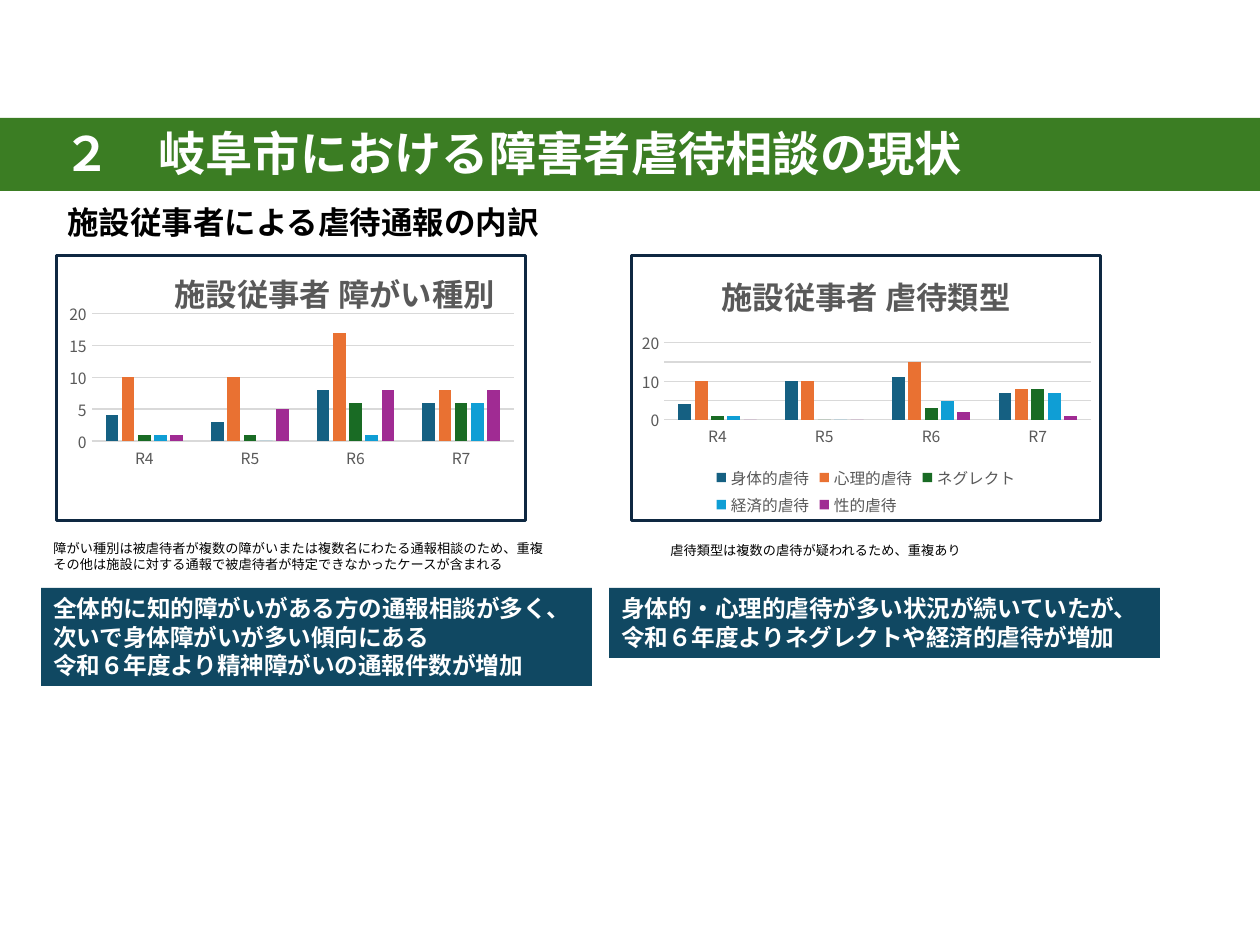
from dataclasses import dataclass

from lxml import etree
from pptx import Presentation
from pptx.chart.data import CategoryChartData as ChartData
from pptx.dml.color import RGBColor
from pptx.enum.chart import XL_CHART_TYPE as ChartType
from pptx.enum.chart import XL_LEGEND_POSITION as LegendPosition
from pptx.enum.chart import XL_TICK_MARK as TickMark
from pptx.enum.shapes import MSO_SHAPE as Shape
from pptx.enum.text import MSO_ANCHOR as Anchor
from pptx.enum.text import MSO_AUTO_SIZE as AutoSize
from pptx.oxml import parse_xml
from pptx.oxml.ns import nsdecls, qn
from pptx.util import Emu, Pt


@dataclass(frozen=True)
class Theme:
    font: str = "Noto Sans CJK JP"
    black: str = "000000"
    white: str = "FFFFFF"
    banner: str = "3B7D23"
    callout: str = "104862"
    chart_text: str = "595959"
    grid: str = "D9D9D9"
    border: str = "0E2841"
    series: tuple = ("156082", "E97132", "196B24", "0F9ED5", "A02B93")
    banner_size: float = 27
    heading_size: float = 18
    callout_size: float = 13.5
    chart_size: float = 10
    axis_size: float = 9
    note_size: float = 7.5


THEME = Theme()
PX_PER_INCH = 126
YEARS = ("R4", "R5", "R6", "R7")
DISABILITY_COUNTS = ((4, 3, 8, 6), (10, 10, 17, 8), (1, 1, 6, 6), (1, 0, 1, 6), (1, 5, 8, 8))
ABUSE_COUNTS = ((4, 10, 11, 7), (10, 10, 15, 8), (1, 0, 3, 8), (1, 0, 5, 7), (0, 0, 2, 1))
ABUSE_TYPES = ("身体的虐待", "心理的虐待", "ネグレクト", "経済的虐待", "性的虐待")


def px(length):
    return Emu(round(length * 914400 / PX_PER_INCH))


def rgb(color):
    return RGBColor.from_string(color)


def style_font(font, size, color, bold=False):
    font.size, font.bold = Pt(size), bold
    font.color.rgb = rgb(color)
    font.name = THEME.font
    # East Asian text takes its typeface from a separate element
    latin = font._element.find(qn("a:latin"))
    latin.addnext(etree.Element(qn("a:ea"), typeface=THEME.font))


def fill_text(shape, lines, size, color, bold=False):
    frame = shape.text_frame
    frame.word_wrap = False
    frame.auto_size = AutoSize.SHAPE_TO_FIT_TEXT
    frame.text = "\n".join(lines)
    for paragraph in frame.paragraphs:
        style_font(paragraph.font, size, color, bold)
    return frame


def add_text(slide, box, lines, size, color, bold=False):
    shape = slide.shapes.add_textbox(*map(px, box))
    return fill_text(shape, lines, size, color, bold)


def add_band(slide, box, color):
    shape = slide.shapes.add_shape(Shape.RECTANGLE, *map(px, box))
    shape.shadow.inherit = False
    shape.fill.solid()
    shape.fill.fore_color.rgb = rgb(color)
    shape.line.fill.background()


def add_callout(slide, box, lines):
    shape = slide.shapes.add_textbox(*map(px, box))
    shape.fill.solid()
    shape.fill.fore_color.rgb = rgb(THEME.callout)
    fill_text(shape, lines, THEME.callout_size, THEME.white, bold=True)


def layout_xml(position, inner=False):
    """Manual layout in fractions of the chart: x, y and optionally w, h."""
    target = '<c:layoutTarget val="inner"/>' if inner else ""
    modes = '<c:xMode val="edge"/><c:yMode val="edge"/>'
    places = "".join(f'<c:{key} val="{value}"/>' for key, value in zip("xywh", position))
    return parse_xml(
        f'<c:layout {nsdecls("c")}><c:manualLayout>{target}{modes}{places}'
        "</c:manualLayout></c:layout>"
    )


def remove_layout(element):
    for layout in element.findall(qn("c:layout")):
        element.remove(layout)


def set_title(chart, text, position):
    title = chart.chart_title
    title.text_frame.text = text
    style_font(title.text_frame.paragraphs[0].font, THEME.heading_size, THEME.chart_text, True)
    title.include_in_layout = False
    remove_layout(title._element)
    title._element.find(qn("c:tx")).addnext(layout_xml(position))


def set_plot_area(chart, position):
    area = chart._chartSpace.chart.plotArea
    remove_layout(area)
    area.insert(0, layout_xml(position, inner=True))


def set_border(chart):
    border = parse_xml(
        f'<c:spPr {nsdecls("c", "a")}><a:noFill/><a:ln w="{Pt(1.5)}"><a:solidFill>'
        f'<a:srgbClr val="{THEME.border}"/></a:solidFill></a:ln></c:spPr>'
    )
    chart._chartSpace.chart.addnext(border)


def style_axes(chart):
    for axis in (chart.category_axis, chart.value_axis):
        axis.major_tick_mark = axis.minor_tick_mark = TickMark.NONE
        style_font(axis.tick_labels.font, THEME.axis_size, THEME.chart_text)
    values = chart.value_axis
    values.minimum_scale, values.maximum_scale, values.major_unit = 0, 20, 5
    values.format.line.fill.background()
    values.has_major_gridlines = True
    for line in (chart.category_axis.format.line, values.major_gridlines.format.line):
        line.color.rgb = rgb(THEME.grid)
        line.width = Pt(0.75)


def add_legend(chart):
    chart.has_legend = True
    chart.legend.position = LegendPosition.BOTTOM
    chart.legend.include_in_layout = False
    style_font(chart.legend.font, THEME.axis_size, THEME.chart_text)


def add_column_chart(slide, box, title, title_at, plot_at, counts, names=()):
    """Clustered columns; the legend shows only when the series have names."""
    data = ChartData()
    data.categories = YEARS
    for name, values in zip(names or [""] * len(counts), counts):
        data.add_series(name, values)
    chart = slide.shapes.add_chart(ChartType.COLUMN_CLUSTERED, *map(px, box), data).chart
    style_font(chart.font, THEME.chart_size, THEME.black)
    set_title(chart, title, title_at)
    set_plot_area(chart, plot_at)
    set_border(chart)
    style_axes(chart)
    plot = chart.plots[0]
    plot.vary_by_categories = False
    plot.gap_width, plot.overlap = 219, -27
    for series, color in zip(plot.series, THEME.series):
        series.format.fill.solid()
        series.format.fill.fore_color.rgb = rgb(color)
    chart.has_legend = False
    if names:
        add_legend(chart)


def main():
    presentation = Presentation()
    presentation.slide_width, presentation.slide_height = px(1260), px(945)
    slide = presentation.slides.add_slide(presentation.slide_layouts[6])

    # Banner and heading
    add_band(slide, (0, 118, 1260, 73), THEME.banner)
    banner = add_text(slide, (55, 124, 1000, 64), ["２　岐阜市における障害者虐待相談の現状"],
                      THEME.banner_size, THEME.white, bold=True)
    banner.word_wrap, banner.auto_size = True, AutoSize.NONE
    banner.vertical_anchor = Anchor.MIDDLE
    banner.margin_left = banner.margin_right = px(9)
    banner.margin_top = banner.margin_bottom = px(5)
    banner.paragraphs[0].line_spacing = 0.9
    add_text(slide, (55, 197, 505, 50), ["施設従事者による虐待通報の内訳"],
             THEME.heading_size, THEME.black, bold=True)

    # Charts
    add_column_chart(slide, (55, 254, 472, 268), "施設従事者 障がい種別", (0.24, 0.02),
                     (0.075, 0.22, 0.9, 0.48), DISABILITY_COUNTS)
    add_column_chart(slide, (630, 254, 472, 268), "施設従事者 虐待類型", (0.18, 0.03),
                     (0.07, 0.33, 0.91, 0.29), ABUSE_COUNTS, ABUSE_TYPES)

    # Notes under the charts
    add_text(slide, (41, 534, 515, 44),
             ["障がい種別は被虐待者が複数の障がいまたは複数名にわたる通報相談のため、重複",
              "その他は施設に対する通報で被虐待者が特定できなかったケースが含まれる"],
             THEME.note_size, THEME.black)
    add_text(slide, (658, 536, 317, 29), ["虐待類型は複数の虐待が疑われるため、重複あり"],
             THEME.note_size, THEME.black)

    # Findings
    add_callout(slide, (41, 588, 551, 98),
                ["全体的に知的障がいがある方の通報相談が多く、", "次いで身体障がいが多い傾向にある",
                 "令和６年度より精神障がいの通報件数が増加"])
    add_callout(slide, (609, 588, 551, 70),
                ["身体的・心理的虐待が多い状況が続いていたが、", "令和６年度よりネグレクトや経済的虐待が増加"])
    presentation.save("out.pptx")


if __name__ == "__main__":
    main()
